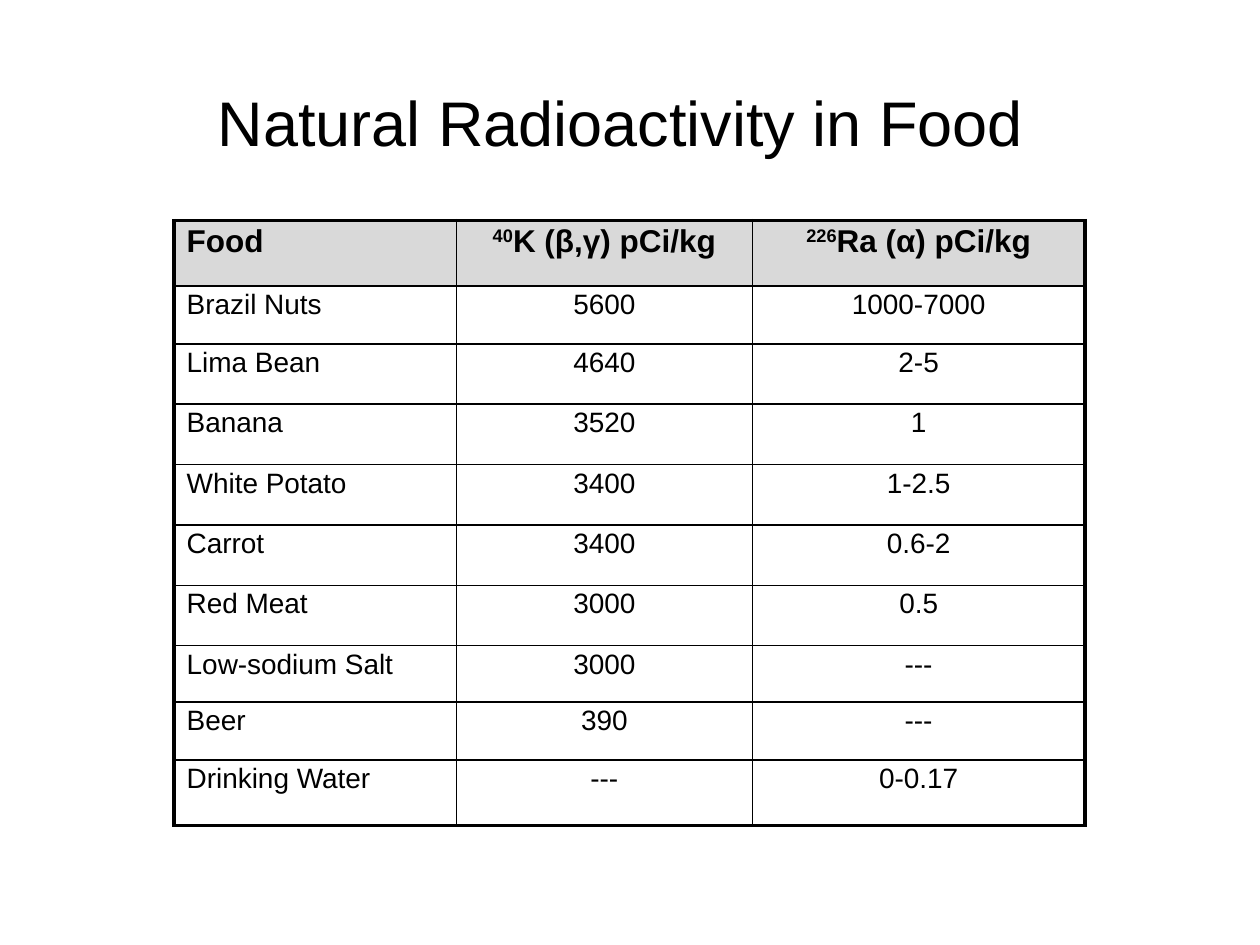
from lxml.etree import SubElement
from pptx import Presentation
from pptx.dml.color import RGBColor
from pptx.enum.text import MSO_ANCHOR as Anchor, MSO_AUTO_SIZE as AutoSize, PP_ALIGN as Align
from pptx.oxml.ns import qn
from pptx.util import Pt

FONT = "Arial"
BLACK, HEADER_GRAY = "000000", "D9D9D9"
THICK, THIN = 2.25, 1

COLUMN_WIDTHS = [161.25, 169.25, 190]
ROW_HEIGHTS = [37.5, 33, 34.5, 34.5, 34.5, 34.5, 34.5, 32.25, 33, 37.5]

# Each heading is a superscript mass number and the text after it
HEADINGS = [("", "Food"), ("40", "K (β,γ) pCi/kg"), ("226", "Ra (α) pCi/kg")]
FOODS = [
    ("Brazil Nuts", "5600", "1000-7000"),
    ("Lima Bean", "4640", "2-5"),
    ("Banana", "3520", "1"),
    ("White Potato", "3400", "1-2.5"),
    ("Carrot", "3400", "0.6-2"),
    ("Red Meat", "3000", "0.5"),
    ("Low-sodium Salt", "3000", "---"),
    ("Beer", "390", "---"),
    ("Drinking Water", "---", "0-0.17"),
]


def color(hex_value):
    return RGBColor.from_string(hex_value)


def format_paragraph(paragraph, size, align, bold=False):
    paragraph.alignment = align
    font = paragraph.font
    font.name, font.size, font.bold = FONT, Pt(size), bold
    font.color.rgb = color(BLACK)


def add_title(slide, text):
    title = slide.shapes.title
    title.left, title.top, title.width, title.height = Pt(104.5), Pt(44), Pt(500), Pt(50.5)
    frame = title.text_frame
    frame.text = text
    frame.word_wrap = True
    frame.auto_size = AutoSize.NONE
    frame.vertical_anchor = Anchor.TOP
    paragraph = frame.paragraphs[0]
    format_paragraph(paragraph, 36, Align.CENTER)
    paragraph.line_spacing = 1.0
    paragraph.space_before = Pt(4)


def set_borders(cell, widths):
    """Draw the left, right, top and bottom borders, in that order."""
    properties = cell._tc.get_or_add_tcPr()
    for side, width in zip("LRTB", widths):
        line = SubElement(properties, qn(f"a:ln{side}"), w=str(Pt(width)))
        fill = SubElement(line, qn("a:solidFill"))
        SubElement(fill, qn("a:srgbClr"), val=BLACK)


def fill_cell(cell, mass_number, text, is_header, align):
    paragraph = cell.text_frame.paragraphs[0]
    if mass_number:
        run = paragraph.add_run()
        run.text = mass_number
        run.font._element.set("baseline", "30000")
    paragraph.add_run().text = text
    format_paragraph(paragraph, 18 if is_header else 16, align, is_header)
    paragraph.line_spacing = 0.9
    if is_header:
        cell.fill.solid()
        cell.fill.fore_color.rgb = color(HEADER_GRAY)
    else:
        cell.fill.background()


def add_food_table(slide):
    rows = [HEADINGS] + [[("", value) for value in food] for food in FOODS]
    last_row, last_column = len(rows) - 1, len(HEADINGS) - 1
    table = slide.shapes.add_table(
        len(rows), len(HEADINGS), Pt(99.5), Pt(126),
        Pt(sum(COLUMN_WIDTHS)), Pt(sum(ROW_HEIGHTS))).table
    for column, width in zip(table.columns, COLUMN_WIDTHS):
        column.width = Pt(width)
    for row, height in zip(table.rows, ROW_HEIGHTS):
        row.height = Pt(height)

    # Outer edges are thick, inner grid lines thin
    for row_index, row in enumerate(rows):
        for column_index, (mass_number, text) in enumerate(row):
            cell = table.cell(row_index, column_index)
            outer = (column_index == 0, column_index == last_column,
                     row_index == 0, row_index == last_row)
            set_borders(cell, [THICK if edge else THIN for edge in outer])
            align = Align.LEFT if column_index == 0 else Align.CENTER
            fill_cell(cell, mass_number, text, row_index == 0, align)


def main():
    presentation = Presentation()
    presentation.slide_width, presentation.slide_height = Pt(720), Pt(540)
    slide = presentation.slides.add_slide(presentation.slide_layouts[5])
    add_title(slide, "Natural Radioactivity in Food")
    add_food_table(slide)
    presentation.save("out.pptx")


if __name__ == "__main__":
    main()
